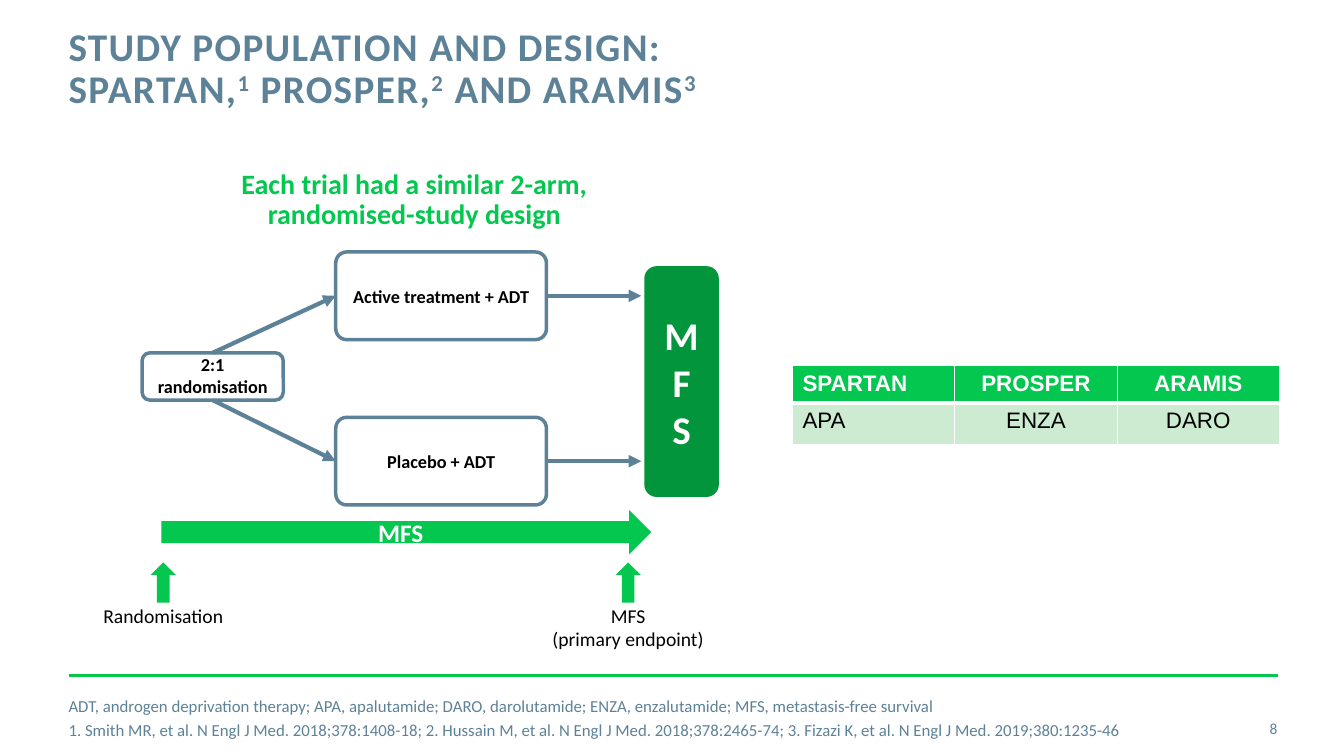
from dataclasses import dataclass
from lxml.etree import SubElement
from pptx import Presentation
from pptx.dml.color import RGBColor
from pptx.enum.shapes import MSO_CONNECTOR as Connector, MSO_SHAPE as Shape
from pptx.enum.text import MSO_ANCHOR as Anchor, PP_ALIGN as Align
from pptx.oxml import parse_xml
from pptx.oxml.ns import nsdecls, qn
from pptx.util import Inches, Pt


@dataclass(frozen=True)
class Theme:
    slate: str = "5D8298"
    green: str = "03C74F"
    dark_green: str = "02953B"
    pale_green: str = "CCEBD0"
    white: str = "FFFFFF"
    black: str = "000000"
    font: str = "Calibri"
    table_font: str = "Arial"
    title: int = 28
    heading: int = 20
    arrow: int = 18
    table: int = 16
    label: int = 14
    box: int = 13
    footnote: int = 12
    number: int = 11


THEME = Theme()

TITLE = [("STUDY POPULATION AND DESIGN:\vSPARTAN,", False), ("1", True),
         (" PROSPER,", False), ("2", True), (" AND ARAMIS", False), ("3", True)]
HEADING = "Each trial had a similar 2-arm,\vrandomised-study design"
RANDOMISATION = "2:1\nrandomisation"
ARMS = [("Active treatment + ADT", 2.5, 0), ("Placebo + ADT", 4.14, 2)]  # text, top, start side
ENDPOINT = "M\nF\nS"
TIMELINE = "MFS"
MILESTONES = [("Randomisation", 1.62), ("MFS\v(primary endpoint)", 6.23)]  # text, centre
TRIALS = [("SPARTAN", "PROSPER", "ARAMIS"), ("APA", "ENZA", "DARO")]
FOOTNOTES = (
    "ADT, androgen deprivation therapy; APA, apalutamide; DARO, darolutamide; "
    "ENZA, enzalutamide; MFS, metastasis-free survival\n"
    "1. Smith MR, et al. N Engl J Med. 2018;378:1408-18; "
    "2. Hussain M, et al. N Engl J Med. 2018;378:2465-74; "
    "3. Fizazi K, et al. N Engl J Med. 2019;380:1235-46")
NUMBER = "8"

LEFT, RIGHT = 0.68, 12.68
ARM_LEFT, ARM_WIDTH, ARM_HEIGHT = 3.33, 2.09, 0.87
ARROW_END = 6.36
COLUMN_WIDTH, ROW_HEIGHTS = 1.61, (0.36, 0.41)


def rgb(value):
    return RGBColor.from_string(value)


def style_font(font, size, color, bold=False, name=THEME.font):
    font.name, font.size, font.bold = name, Pt(size), bold
    font.color.rgb = rgb(color)


def write(shape, text, size, color, bold=False, align=Align.CENTER, anchor=Anchor.MIDDLE,
          insets=(0.1, 0.05), wrap=True, line_spacing=None, gap=0):
    """Fill a shape with text; insets are (horizontal, vertical), gap separates paragraphs."""
    frame = shape.text_frame
    frame.text = text
    frame.word_wrap, frame.vertical_anchor = wrap, anchor
    frame.margin_left = frame.margin_right = Inches(insets[0])
    frame.margin_top = frame.margin_bottom = Inches(insets[1])
    for index, paragraph in enumerate(frame.paragraphs):
        paragraph.alignment = align
        if line_spacing:
            paragraph.line_spacing = line_spacing
        if index and gap:
            paragraph.space_before = Pt(gap)
        for run in paragraph.runs:
            style_font(run.font, size, color, bold)


def add_text(slide, box, text, size, color, **options):
    shape = slide.shapes.add_textbox(*map(Inches, box))
    write(shape, text, size, color, **options)
    return shape


def add_block(slide, kind, box, fill, outline=None, corner=None):
    shape = slide.shapes.add_shape(kind, *map(Inches, box))
    shape.shadow.inherit = False
    shape.fill.solid()
    shape.fill.fore_color.rgb = rgb(fill)
    if outline:
        shape.line.color.rgb = rgb(outline)
        shape.line.width = Pt(2.5)
    else:
        shape.line.fill.background()
    if corner:
        shape.adjustments[0] = corner
    return shape


def add_line(slide, start, end, color, width, arrow=False):
    line = slide.shapes.add_connector(Connector.STRAIGHT, *map(Inches, start + end))
    line.line.color.rgb = rgb(color)
    line.line.width = Pt(width)
    properties = line._element.spPr
    if arrow:
        SubElement(properties.find(qn("a:ln")), qn("a:tailEnd"), type="triangle")
    SubElement(properties, qn("a:effectLst"))
    return line


def add_title(slide):
    shape = slide.shapes.add_textbox(*map(Inches, (LEFT, 0.27, 9.56, 0.88)))
    write(shape, "", THEME.title, THEME.slate, align=Align.LEFT, anchor=Anchor.TOP,
          insets=(0, 0), line_spacing=Pt(30))
    paragraph = shape.text_frame.paragraphs[0]
    paragraph.text = TITLE[0][0]
    for text, _ in TITLE[1:]:
        paragraph.add_run().text = text
    superscripts = {text for text, raised in TITLE if raised}
    for run in paragraph.runs:
        style_font(run.font, THEME.title, THEME.slate, True)
        run.font._element.set("spc", "100")
        if run.text in superscripts:
            run.font._element.set("baseline", "30000")


def add_design(slide):
    add_text(slide, (1.08, 1.57, 6.06, 0.84), HEADING, THEME.heading, THEME.green,
             bold=True, line_spacing=0.9)
    start = add_block(slide, Shape.ROUNDED_RECTANGLE, (1.41, 3.5, 1.4, 0.47),
                      THEME.white, THEME.slate, 0.167)
    write(start, RANDOMISATION, THEME.box, THEME.black, bold=True, insets=(0.07, 0.03),
          wrap=False, line_spacing=0.9, gap=1.3)
    endpoint = add_block(slide, Shape.ROUNDED_RECTANGLE, (6.39, 2.64, 0.74, 2.29),
                         THEME.dark_green)
    write(endpoint, ENDPOINT, THEME.title, THEME.white, bold=True)

    for text, top, side in ARMS:
        arm = add_block(slide, Shape.ROUNDED_RECTANGLE, (ARM_LEFT, top, ARM_WIDTH, ARM_HEIGHT),
                        THEME.white, THEME.slate, 0.125)
        write(arm, text, THEME.box, THEME.black, bold=True, insets=(0, 0.03))
        middle = top + ARM_HEIGHT / 2
        branch = add_line(slide, (2.11, 3.5), (ARM_LEFT, middle), THEME.slate, 3, arrow=True)
        branch.begin_connect(start, side)
        branch.end_connect(arm, 1)
        outcome = add_line(slide, (ARM_LEFT + ARM_WIDTH, middle), (ARROW_END, middle),
                           THEME.slate, 3, arrow=True)
        outcome.begin_connect(arm, 3)

    timeline = add_block(slide, Shape.RIGHT_ARROW, (1.6, 5.06, 4.86, 0.44), THEME.green)
    write(timeline, TIMELINE, THEME.arrow, THEME.white, bold=True, insets=(0.03, 0.02))
    for text, centre in MILESTONES:
        add_block(slide, Shape.UP_ARROW, (centre - 0.125, 5.58, 0.25, 0.4), THEME.green)
        add_text(slide, (centre - 1.2, 5.94, 2.4, 0.57), text, THEME.label, THEME.black,
                 anchor=Anchor.TOP)


def add_border(cell, side, width):
    return parse_xml(
        f'<a:{side} {nsdecls("a")} w="{Pt(width)}"><a:solidFill>'
        f'<a:srgbClr val="{THEME.white}"/></a:solidFill></a:{side}>')


def add_trials(slide):
    box = (7.86, 3.63, COLUMN_WIDTH * len(TRIALS[0]), sum(ROW_HEIGHTS))
    table = slide.shapes.add_table(len(TRIALS), len(TRIALS[0]), *map(Inches, box)).table
    for column in table.columns:
        column.width = Inches(COLUMN_WIDTH)
    for r, names in enumerate(TRIALS):
        header = r == 0
        table.rows[r].height = Inches(ROW_HEIGHTS[r])
        for c, name in enumerate(names):
            cell = table.cell(r, c)
            cell.text = name
            cell.fill.solid()
            cell.fill.fore_color.rgb = rgb(THEME.green if header else THEME.pale_green)
            paragraph = cell.text_frame.paragraphs[0]
            paragraph.alignment = Align.CENTER if c else Align.LEFT
            style_font(paragraph.runs[0].font, THEME.table,
                       THEME.white if header else THEME.black, header, THEME.table_font)
            widths = {"lnL": 1, "lnR": 1, "lnT": 1 if header else 3, "lnB": 3 if header else 1}
            for index, (side, width) in enumerate(widths.items()):
                cell._tc.get_or_add_tcPr().insert(index, add_border(cell, side, width))


def main():
    presentation = Presentation()
    presentation.slide_width, presentation.slide_height = Inches(13.33), Inches(7.5)
    slide = presentation.slides.add_slide(presentation.slide_layouts[6])
    add_line(slide, (LEFT, 6.7), (RIGHT, 6.7), THEME.green, 2)
    add_title(slide)
    add_design(slide)
    add_trials(slide)
    add_text(slide, (LEFT, 6.92, 11.27, 0.4), FOOTNOTES, THEME.footnote, THEME.slate,
             align=Align.LEFT, insets=(0, 0), gap=3)
    add_text(slide, (11.81, 7.03, 0.86, 0.4), NUMBER, THEME.number, THEME.slate,
             align=Align.RIGHT, insets=(0, 0))
    presentation.save("out.pptx")


if __name__ == "__main__":
    main()
